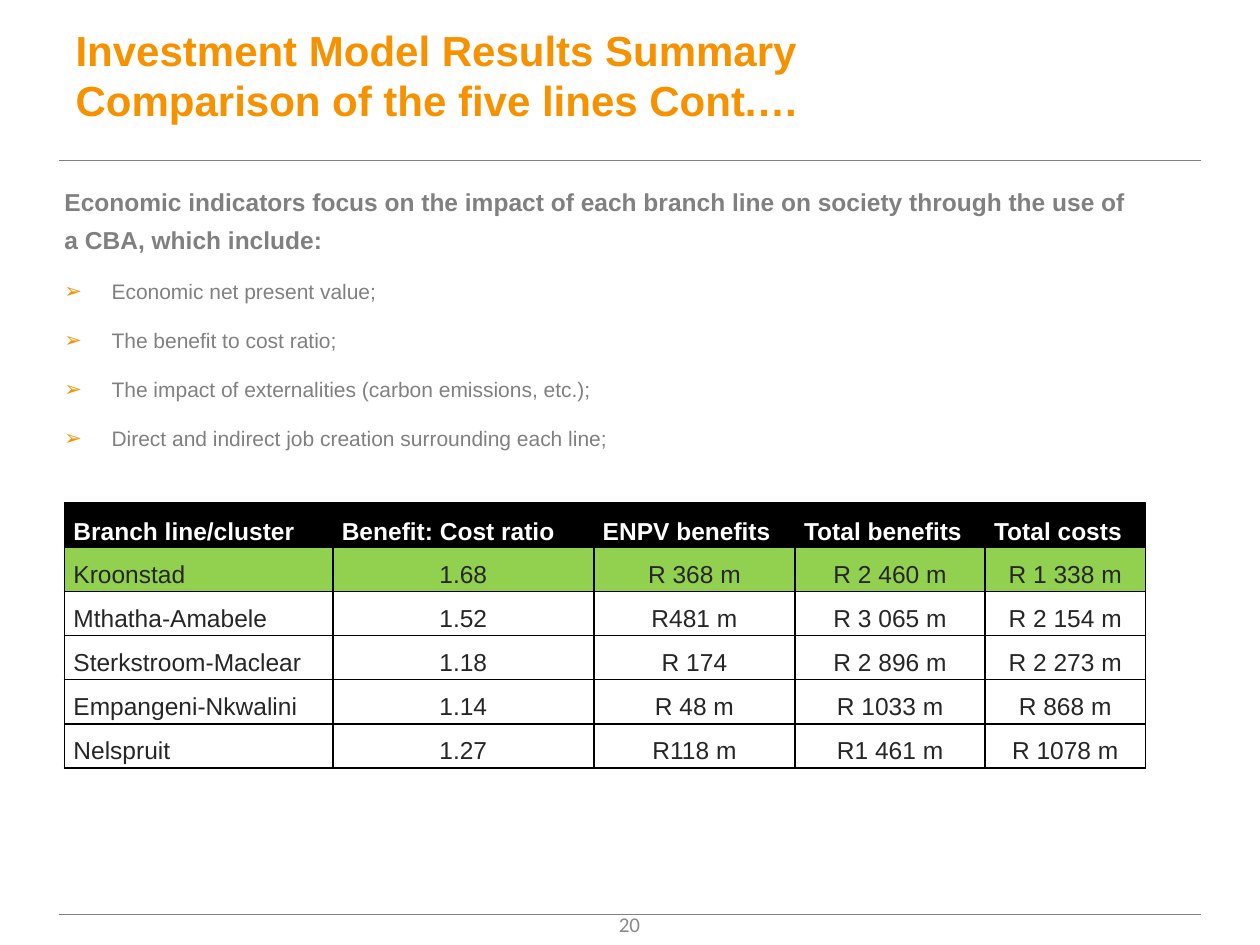
from typing import NamedTuple, Optional

from lxml.etree import SubElement
from pptx import Presentation
from pptx.dml.color import RGBColor
from pptx.enum.shapes import MSO_CONNECTOR
from pptx.enum.text import MSO_ANCHOR, MSO_AUTO_SIZE, PP_ALIGN
from pptx.oxml.ns import qn
from pptx.util import Cm, Pt

ORANGE = "F69200"
GREY = "808080"
BLACK = "000000"
WHITE = "FFFFFF"
INK = "262626"
GREEN = "92D050"


class BranchLine(NamedTuple):
    name: str
    ratio: str
    enpv: str
    benefits: str
    costs: str


HEADINGS = BranchLine("Branch line/cluster", "Benefit: Cost ratio",
                      "ENPV benefits", "Total benefits", "Total costs")
BRANCH_LINES = [
    BranchLine("Kroonstad", "1.68", "R 368 m", "R 2 460 m", "R 1 338 m"),
    BranchLine("Mthatha-Amabele", "1.52", "R481 m", "R 3 065 m", "R 2 154 m"),
    BranchLine("Sterkstroom-Maclear", "1.18", "R 174", "R 2 896 m", "R 2 273 m"),
    BranchLine("Empangeni-Nkwalini", "1.14", "R 48 m", "R 1033 m", "R 868 m"),
    BranchLine("Nelspruit", "1.27", "R118 m", "R1 461 m", "R 1078 m"),
]
COLUMN_WIDTHS = [5.41, 5.26, 4.06, 3.83, 3.23]
INDICATORS = [
    "Economic net present value;",
    "The benefit to cost ratio;",
    "The impact of externalities (carbon emissions, etc.);",
    "Direct and indirect job creation surrounding each line;",
]


def colour(value: str) -> RGBColor:
    return RGBColor.from_string(value)


def write(para, text: str, *, size: float, color: str, font: str = "Arial",
          bold: bool = False, align=PP_ALIGN.LEFT, spacing=None, after=None) -> None:
    """Fill a paragraph; a newline in the text becomes a line break."""
    para.alignment = align
    if spacing is not None:
        para.line_spacing = spacing
    if after is not None:
        para.space_after = after
    for index, line in enumerate(text.split("\n")):
        if index:
            para.add_line_break()
        span = para.add_run()
        span.text = line
        span.font.name = font
        span.font.size = Pt(size)
        span.font.bold = bold
        span.font.color.rgb = colour(color)


def add_bullet(para, mark: str, color: str, indent: Cm) -> None:
    properties = para._p.get_or_add_pPr()
    properties.set("marL", str(indent))
    properties.set("indent", str(-indent))
    bullet_colour = SubElement(properties, qn("a:buClr"))
    SubElement(bullet_colour, qn("a:srgbClr"), val=color)
    SubElement(properties, qn("a:buFont"), typeface="Arial")
    SubElement(properties, qn("a:buChar"), char=mark)


def add_rule(page, top: float) -> None:
    rule = page.shapes.add_connector(
        MSO_CONNECTOR.STRAIGHT, Cm(1.19), Cm(top), Cm(24.21), Cm(top))
    rule.line.color.rgb = colour(GREY)
    rule.line.width = Pt(0.75)
    SubElement(rule._element.spPr, qn("a:effectLst"))


def add_text_box(page, left: float, top: float, width: float, height: float):
    box = page.shapes.add_textbox(Cm(left), Cm(top), Cm(width), Cm(height))
    box.text_frame.word_wrap = True
    return box.text_frame


def add_borders(cell, color: str, width: Pt) -> None:
    properties = cell._tc.get_or_add_tcPr()
    for position, side in enumerate(("a:lnL", "a:lnR", "a:lnT", "a:lnB")):
        border = properties.makeelement(qn(side), {"w": str(width)})
        fill = SubElement(border, qn("a:solidFill"))
        SubElement(fill, qn("a:srgbClr"), val=color)
        properties.insert(position, border)


def format_cell(cell, text: str, *, fill: Optional[str], color: str,
                bold: bool, align, anchor) -> None:
    cell.margin_left = cell.margin_right = Cm(0.18)
    cell.margin_top = cell.margin_bottom = 0
    cell.vertical_anchor = anchor
    if fill:
        cell.fill.solid()
        cell.fill.fore_color.rgb = colour(fill)
    else:
        cell.fill.background()
    add_borders(cell, BLACK, Pt(1))
    write(cell.text_frame.paragraphs[0], text, size=14, color=color,
          bold=bold, align=align, spacing=1.5)


def add_results_table(page) -> None:
    rows = [HEADINGS, *BRANCH_LINES]
    table = page.shapes.add_table(
        len(rows), len(COLUMN_WIDTHS), Cm(1.3), Cm(10.14),
        Cm(sum(COLUMN_WIDTHS)), Cm(0.89 * len(rows))).table
    table.horz_banding = False
    for column, width in zip(table.columns, COLUMN_WIDTHS):
        column.width = Cm(width)
    for row_index, row in enumerate(rows):
        header = row_index == 0
        fill = {0: BLACK, 1: GREEN}.get(row_index)
        for column_index, text in enumerate(row):
            justified = header or column_index == 0
            format_cell(
                table.cell(row_index, column_index), text, fill=fill,
                color=WHITE if header else INK, bold=header,
                align=PP_ALIGN.JUSTIFY if justified else PP_ALIGN.CENTER,
                anchor=MSO_ANCHOR.MIDDLE if header else MSO_ANCHOR.TOP)


def add_title(page) -> None:
    title = page.shapes.title
    title.left, title.top = Cm(1.27), Cm(0.08)
    title.width, title.height = Cm(22.86), Cm(2.84)
    frame = title.text_frame
    frame.auto_size = MSO_AUTO_SIZE.NONE
    frame.vertical_anchor = MSO_ANCHOR.MIDDLE
    write(frame.paragraphs[0],
          "Investment Model Results Summary\nComparison of the five lines Cont.…",
          size=24, color=ORANGE, bold=True)


def add_indicators(page) -> None:
    frame = add_text_box(page, 1.3, 3.48, 21.41, 5.66)
    frame.margin_left = frame.margin_right = frame.margin_bottom = 0
    frame.margin_top = Cm(0.1)
    write(frame.paragraphs[0],
          "Economic indicators focus on the impact of each branch line on society "
          "through the use of a CBA, which include:",
          size=14, color=GREY, bold=True, spacing=Pt(22), after=Pt(6))
    for indicator in INDICATORS:
        para = frame.add_paragraph()
        add_bullet(para, "➢", ORANGE, Cm(0.95))
        write(para, indicator, size=12, color=GREY, spacing=Pt(22), after=Pt(6))


def main() -> None:
    deck = Presentation()
    deck.slide_width, deck.slide_height = Cm(25.4), Cm(19.05)
    page = deck.slides.add_slide(deck.slide_layouts[5])

    # Rules and page number
    for top in (3.23, 18.44):
        add_rule(page, top)
    number = add_text_box(page, 9.73, 18.11, 5.92, 1.02)
    number.vertical_anchor = MSO_ANCHOR.MIDDLE
    write(number.paragraphs[0], "20", size=12, color="898989",
          font="Calibri", align=PP_ALIGN.CENTER)

    # Title, indicators and results
    add_title(page)
    add_indicators(page)
    add_results_table(page)

    deck.save("out.pptx")


if __name__ == "__main__":
    main()
